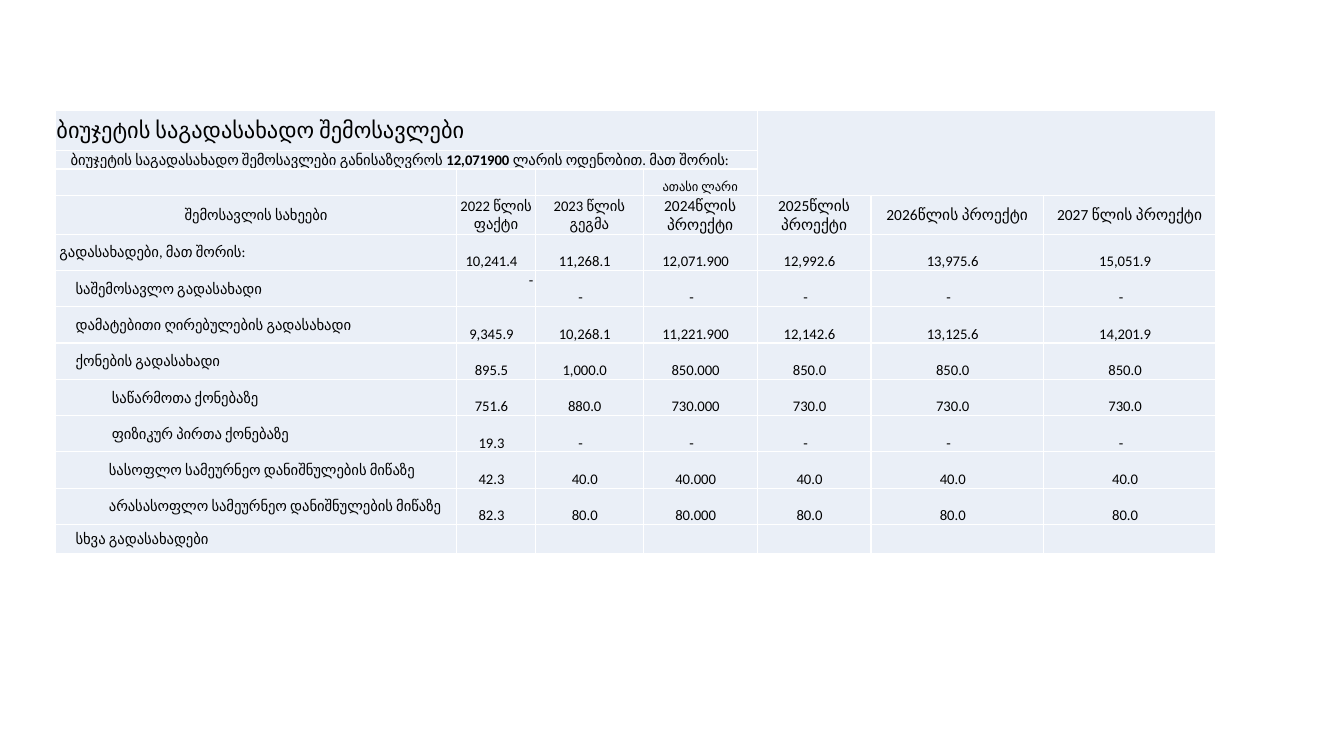
from lxml import etree
from pptx import Presentation
from pptx.dml.color import RGBColor
from pptx.enum.text import MSO_ANCHOR, PP_ALIGN
from pptx.oxml.ns import qn
from pptx.util import Inches, Pt


def color(hex_string):
    return RGBColor.from_string(hex_string)


def write(cell, runs, align=PP_ALIGN.CENTER, anchor=MSO_ANCHOR.MIDDLE, left=0.01, right=0.01):
    """Fill a cell with (text, size, bold) runs and set its alignment and margins."""
    cell.vertical_anchor = anchor
    cell.margin_left, cell.margin_right = Inches(left), Inches(right)
    paragraph = cell.text_frame.paragraphs[0]
    paragraph.alignment = align
    for text, size, bold in runs:
        run = paragraph.add_run()
        run.text = text
        run.font.name = "Calibri"
        run.font.size = Pt(size)
        run.font.bold = bold
        run.font.color.rgb = color("000000")


presentation = Presentation()
presentation.slide_width, presentation.slide_height = Inches(13.33), Inches(7.5)
slide = presentation.slides.add_slide(presentation.slide_layouts[6])

# Table frame
column_widths = [3.98, 0.78, 1.07, 1.13, 1.13, 1.71, 1.71]
row_heights = [0.39, 0.18, 0.26, 0.38] + [0.36] * 8 + [0.29]
table = slide.shapes.add_table(
    len(row_heights), len(column_widths), Inches(0.55), Inches(1.1),
    Inches(sum(column_widths)), Inches(sum(row_heights))).table
table.first_row = table.horz_banding = False
for column, width in zip(table.columns, column_widths):
    column.width = Inches(width)
for row, height in zip(table.rows, row_heights):
    row.height = Inches(height)

# White borders, pale fill and thin margins for every cell
for cell in table.iter_cells():
    properties = cell._tc.get_or_add_tcPr()
    for side in ("lnL", "lnR", "lnT", "lnB"):
        line = etree.SubElement(properties, qn("a:" + side), w=str(Pt(1)))
        line_fill = etree.SubElement(line, qn("a:solidFill"))
        etree.SubElement(line_fill, qn("a:srgbClr"), val="FFFFFF")
    cell.fill.solid()
    cell.fill.fore_color.rgb = color("EAEFF7")
    cell.margin_left = cell.margin_right = cell.margin_top = Inches(0.01)
    cell.margin_bottom = 0

# Title block
table.cell(0, 0).merge(table.cell(0, 3))
table.cell(1, 0).merge(table.cell(1, 3))
table.cell(0, 4).merge(table.cell(2, 6))
write(table.cell(0, 0), [("ბიუჯეტის საგადასახადო შემოსავლები", 16, False)], PP_ALIGN.LEFT)
write(table.cell(1, 0), [
    ("ბიუჯეტის საგადასახადო შემოსავლები განისაზღვროს ", 10.5, False),
    ("12,071900 ", 10.5, True),
    ("ლარის ოდენობით. მათ შორის:", 10.5, False)], PP_ALIGN.LEFT, left=0.15)
write(table.cell(2, 3), [("ათასი ლარი", 9, False)], anchor=MSO_ANCHOR.BOTTOM)

# Column headings: text, size, side margin
headings = [
    ("შემოსავლის სახეები", 10.5, 0.01), ("2022 წლის ფაქტი", 10.5, 0.01),
    ("2023 წლის გეგმა", 10.5, 0.1), ("2024წლის პროექტი", 11, 0.01),
    ("2025წლის პროექტი", 11, 0.01), ("2026წლის პროექტი", 11, 0.01),
    ("2027 წლის პროექტი", 11, 0.01)]
for index, (text, size, margin) in enumerate(headings):
    write(table.cell(3, index), [(text, size, False)], left=margin, right=margin)

# Revenue lines: label, indent, values by year
revenues = [
    ("გადასახადები, მათ შორის:", 0.04,
     ["10,241.4", "11,268.1", "12,071.900", "12,992.6", "13,975.6", "15,051.9"]),
    ("საშემოსავლო გადასახადი", 0.2, ["-"] * 6),
    ("დამატებითი ღირებულების გადასახადი", 0.2,
     ["9,345.9", "10,268.1", "11,221.900", "12,142.6", "13,125.6", "14,201.9"]),
    ("ქონების გადასახადი", 0.2, ["895.5", "1,000.0", "850.000"] + ["850.0"] * 3),
    ("საწარმოთა ქონებაზე", 0.56, ["751.6", "880.0", "730.000"] + ["730.0"] * 3),
    ("ფიზიკურ პირთა ქონებაზე", 0.56, ["19.3"] + ["-"] * 5),
    ("სასოფლო სამეურნეო დანიშნულების მიწაზე", 0.53,
     ["42.3", "40.0", "40.000"] + ["40.0"] * 3),
    ("არასასოფლო სამეურნეო დანიშნულების მიწაზე", 0.53,
     ["82.3", "80.0", "80.000"] + ["80.0"] * 3),
    ("სხვა გადასახადები", 0.2, []),
]
for row_index, (label, indent, values) in enumerate(revenues, start=4):
    write(table.cell(row_index, 0), [(label, 10.5, False)], PP_ALIGN.LEFT, left=indent)
    for column_index, value in enumerate(values, start=1):
        cell = table.cell(row_index, column_index)
        if value == "-" and column_index == 1:
            write(cell, [(value, 10.5, False)], PP_ALIGN.RIGHT, MSO_ANCHOR.TOP, right=0.02)
        else:
            write(cell, [(value, 10.5, False)], anchor=MSO_ANCHOR.BOTTOM,
                  right=0.18 if value == "-" else 0.1)

# Small type in empty cells keeps the rows at their height
for cell in table.iter_cells():
    if not cell.text:
        paragraph = cell.text_frame.paragraphs[0]
        etree.SubElement(paragraph._p, qn("a:endParaRPr"), sz="800")

presentation.save("out.pptx")
